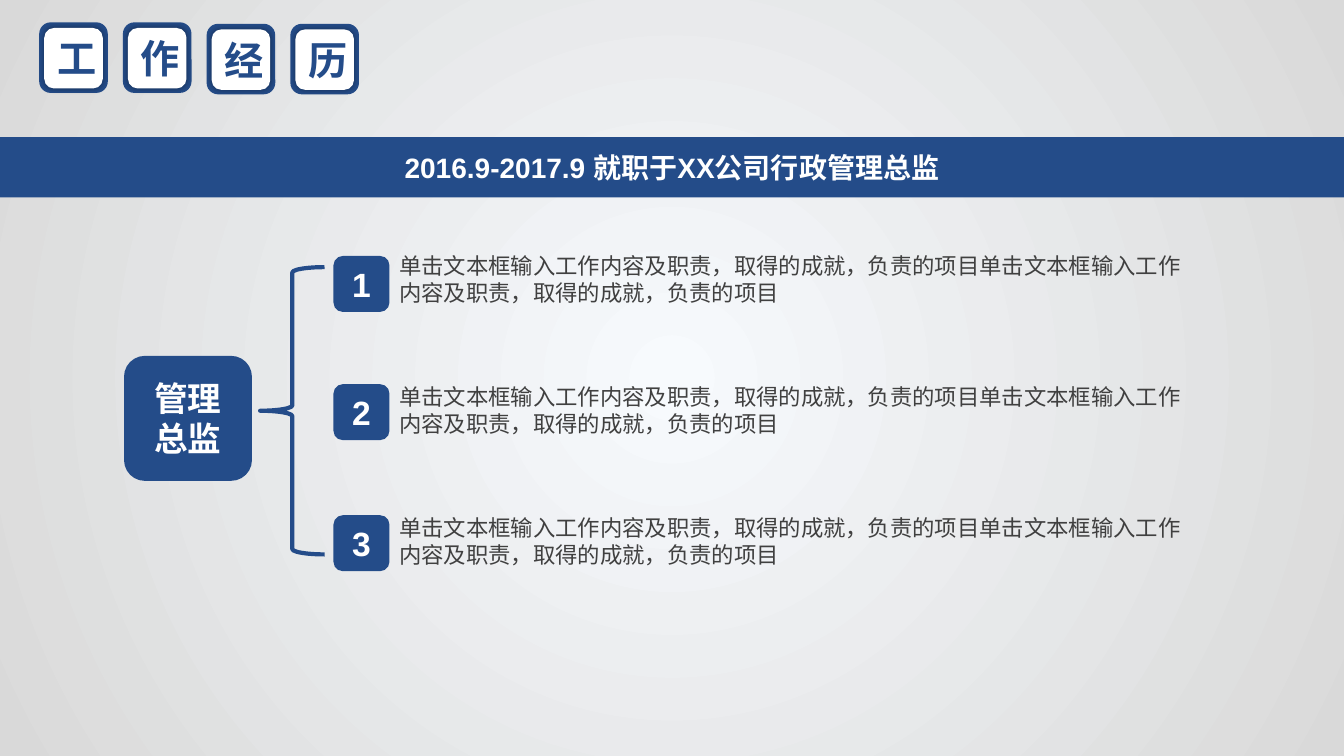
from pptx import Presentation
from pptx.dml.color import RGBColor
from pptx.enum.shapes import MSO_SHAPE
from pptx.enum.text import MSO_ANCHOR, MSO_AUTO_SIZE, PP_ALIGN
from pptx.oxml import parse_xml
from pptx.oxml.ns import nsdecls
from pptx.util import Pt

BLUE, WHITE, GREY = "244C89", "FFFFFF", "404040"
WIDE, HIGH = 960, 540
HEAD = "工作经历"
TERM = "2016.9-2017.9 就职于XX公司行政管理总监"
ROLE = "管理总监"
DUTY = "单击文本框输入工作内容及职责，取得的成就，负责的项目"


def color(code):
    return RGBColor.from_string(code)


def paint(shape, code):
    shape.fill.solid()
    shape.fill.fore_color.rgb = color(code)
    shape.line.fill.background()


def write(shape, text, size, code, bold=True, align=PP_ALIGN.CENTER, anchor=MSO_ANCHOR.MIDDLE):
    frame = shape.text_frame
    frame.text = text
    frame.word_wrap = True
    frame.vertical_anchor = anchor
    para = frame.paragraphs[0]
    para.alignment = align
    font = para.runs[0].font
    font.name = "Arial"
    font.size = Pt(size)
    font.bold = bold
    font.color.rgb = color(code)


def card(shapes, left, top, width, height, code):
    shape = shapes.add_shape(MSO_SHAPE.ROUNDED_RECTANGLE, Pt(left), Pt(top), Pt(width), Pt(height))
    shape.shadow.inherit = False
    paint(shape, code)
    return shape


def glow(shape):
    props = shape.element.spPr
    shape.shadow.inherit = True
    props.append(parse_xml(
        f'<a:effectLst {nsdecls("a")}><a:outerShdw blurRad="{Pt(5)}" dist="0" dir="0" algn="ctr" '
        'rotWithShape="0"><a:srgbClr val="000000"><a:alpha val="40000"/></a:srgbClr>'
        '</a:outerShdw></a:effectLst>'))


def backdrop(slide):
    slide.background.fill.gradient()
    stops = slide.background.fill.gradient_stops
    for stop, code in zip(stops, ("F7FAFD", "D9D9D9")):
        stop.color.rgb = color(code)
    stops[0].position, stops[1].position = 0, 1
    grad = slide.element.cSld.bg.bgPr.find(".//{*}gradFill")
    grad.replace(grad.find("{*}lin"), parse_xml(
        f'<a:path {nsdecls("a")} path="circle">'
        '<a:fillToRect l="50000" t="50000" r="50000" b="50000"/></a:path>'))


def tile(slide, left, top, width, height, text):
    shapes = slide.shapes.add_group_shape().shapes
    card(shapes, left, top, width, height, BLUE)
    face = card(shapes, left + 3.6, top + 4, width - 7.2, height - 7.2, WHITE)
    glow(face)
    write(face, text, 28, BLUE)


def heading(slide, left, top):
    for index, text in enumerate(HEAD):
        tile(slide, left + 59.8 * index, top + index // 2, 49, 50.4, text)


def banner(slide, left, top, width, height):
    title = slide.shapes.title
    title.left, title.top, title.width, title.height = Pt(left), Pt(top), Pt(width), Pt(height)
    paint(title, BLUE)
    write(title, TERM, 20, WHITE)
    title.text_frame.auto_size = MSO_AUTO_SIZE.NONE


def duty(slide, left, top, width, height, number, drop):
    size = 40
    box = slide.shapes.add_textbox(Pt(left + size), Pt(top), Pt(width - size), Pt(height))
    write(box, DUTY * 2, 16, GREY, False, PP_ALIGN.LEFT, MSO_ANCHOR.TOP)
    box.text_frame.auto_size = MSO_AUTO_SIZE.SHAPE_TO_FIT_TEXT
    badge = card(slide.shapes, left, top + drop, size, size, BLUE)
    write(badge, str(number), 24, WHITE)


def tree(slide, left, top, width):
    role = card(slide.shapes, left, top + 77.8, 91.4, 89.3, BLUE)
    write(role, ROLE, 24, WHITE)
    brace = slide.shapes.add_shape(
        MSO_SHAPE.LEFT_BRACE, Pt(left + 97.2), Pt(top + 14.4), Pt(46), Pt(205.2))
    brace.shadow.inherit = False
    brace.fill.background()
    brace.line.color.rgb = color(BLUE)
    brace.line.width = Pt(3)
    for index, drop in enumerate((6.4, 4.4, 4.4)):
        duty(slide, left + 149.6, top + 93.6 * index, width - 149.6, 46, index + 1, drop)


def main():
    deck = Presentation()
    deck.slide_width, deck.slide_height = Pt(WIDE), Pt(HIGH)
    slide = deck.slides.add_slide(deck.slide_layouts[5])
    backdrop(slide)
    banner(slide, 0, 98, WIDE, 43)
    heading(slide, 28, 16)
    tree(slide, 88.6, 176.4, 775.4)
    deck.save("out.pptx")


if __name__ == "__main__":
    main()
